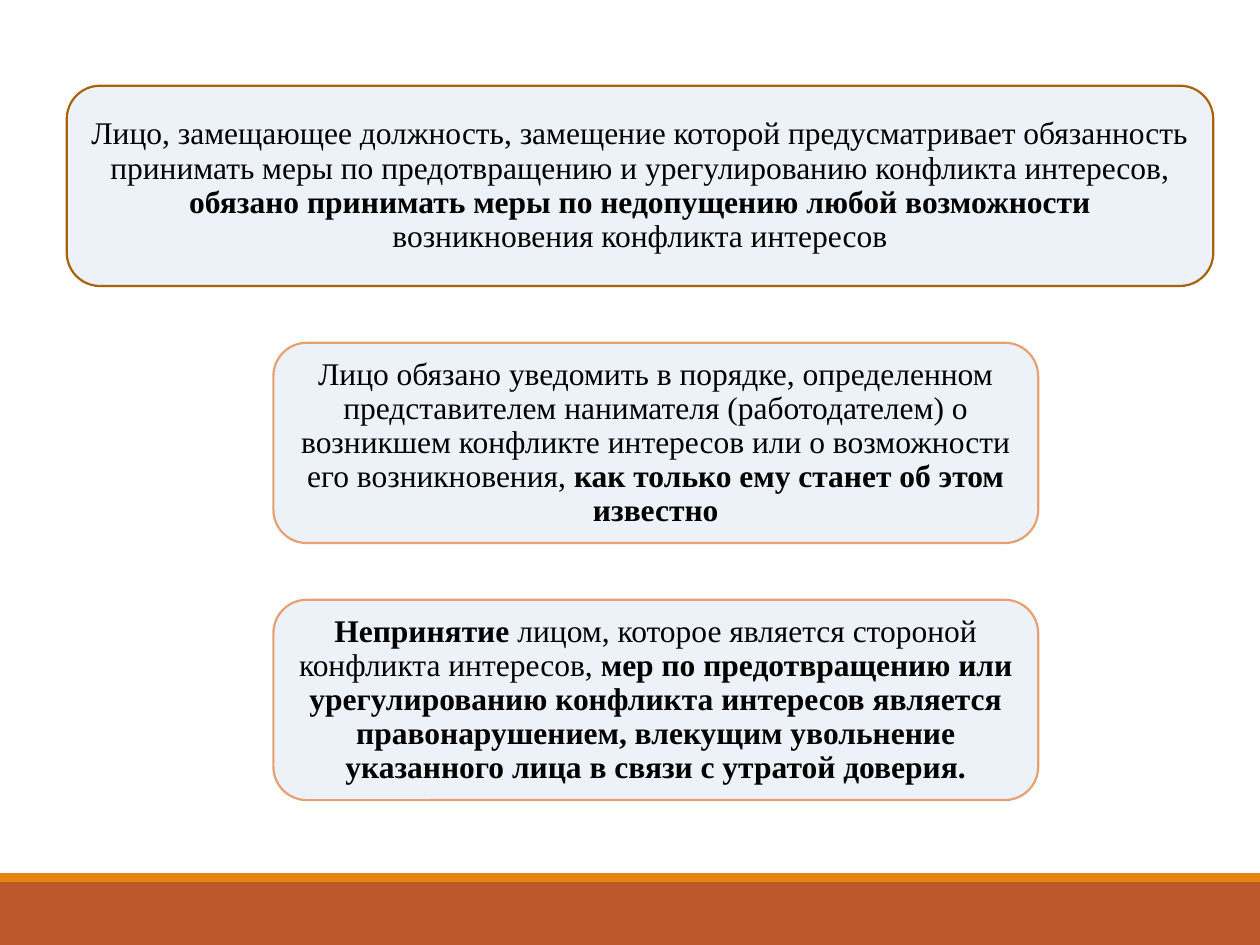
"""Build a slide of three rounded duty cards above a two-tone footer."""
from lxml import etree
from pptx import Presentation
from pptx.dml.color import RGBColor
from pptx.enum.shapes import MSO_SHAPE
from pptx.enum.text import MSO_ANCHOR, PP_ALIGN
from pptx.oxml.ns import qn
from pptx.util import Inches, Pt

RECT, ROUND = MSO_SHAPE.RECTANGLE, MSO_SHAPE.ROUNDED_RECTANGLE
CENTER, MIDDLE = PP_ALIGN.CENTER, MSO_ANCHOR.MIDDLE
RUST = RGBColor(0xBD, 0x58, 0x2C)
AMBER = RGBColor(0xE4, 0x83, 0x12)
PALE = RGBColor(0xEB, 0xF1, 0xF7)
BROWN = RGBColor(0xA9, 0x61, 0x0D)
PEACH = RGBColor(0xE7, 0xA0, 0x71)
BLACK = RGBColor(0, 0, 0)
WIDE, HIGH = 10, 7.5
TOP, STEP, TALL = 0.68, 2.04, 1.59
INSET = Inches(0.07)

deck = Presentation()
deck.slide_width, deck.slide_height = Inches(WIDE), Inches(HIGH)
slide = deck.slides.add_slide(deck.slide_layouts[6])


def add_box(kind, left, top, width, height, color):
    box = slide.shapes.add_shape(
        kind, Inches(left), Inches(top), Inches(width), Inches(height))
    box.shadow.inherit = False
    box.fill.solid()
    box.fill.fore_color.rgb = color
    box.line.fill.background()
    return box


add_box(RECT, 0, HIGH - 0.5, WIDE, 0.5, RUST)
add_box(RECT, 0, HIGH - 0.57, WIDE, 0.07, AMBER)

cards = [
    (0.53, 9.1, BROWN, [
        ("Лицо, замещающее должность, замещение которой предусматривает "
         "обязанность принимать меры по предотвращению и урегулированию "
         "конфликта интересов, ", False),
        ("обязано принимать меры по недопущению любой возможности ", True),
        ("возникновения конфликта интересов", False)]),
    (2.17, 6.07, PEACH, [
        ("Лицо обязано уведомить в порядке, определенном представителем "
         "нанимателя (работодателем) о возникшем конфликте интересов или "
         "о возможности его возникновения, ", False),
        ("как только ему станет об этом известно", True)]),
    (2.17, 6.07, PEACH, [
        ("Непринятие", True),
        (" лицом, которое является стороной конфликта интересов, ", False),
        ("мер по предотвращению или урегулированию конфликта интересов "
         "является правонарушением, влекущим увольнение указанного лица "
         "в связи с утратой доверия.", True)]),
]

for row, (left, width, edge, parts) in enumerate(cards):
    card = add_box(ROUND, left, TOP + row * STEP, width, TALL, PALE)
    tint = card.fill._xPr.find(qn("a:solidFill"))[0]
    etree.SubElement(tint, qn("a:alpha"), val="90000")
    card.line.color.rgb = edge
    card.line.width = Pt(1.25)
    frame = card.text_frame
    frame.word_wrap = True
    frame.vertical_anchor = MIDDLE
    frame.margin_left = frame.margin_right = INSET
    frame.margin_top = frame.margin_bottom = INSET
    para = frame.paragraphs[0]
    para.alignment = CENTER
    para.line_spacing = 0.9
    para.space_after = Pt(6.3)
    for words, bold in parts:
        run = para.add_run()
        run.text = words
        run.font.name = "Times New Roman"
        run.font.size = Pt(18)
        run.font.bold = bold
        run.font.color.rgb = BLACK

deck.save("out.pptx")
